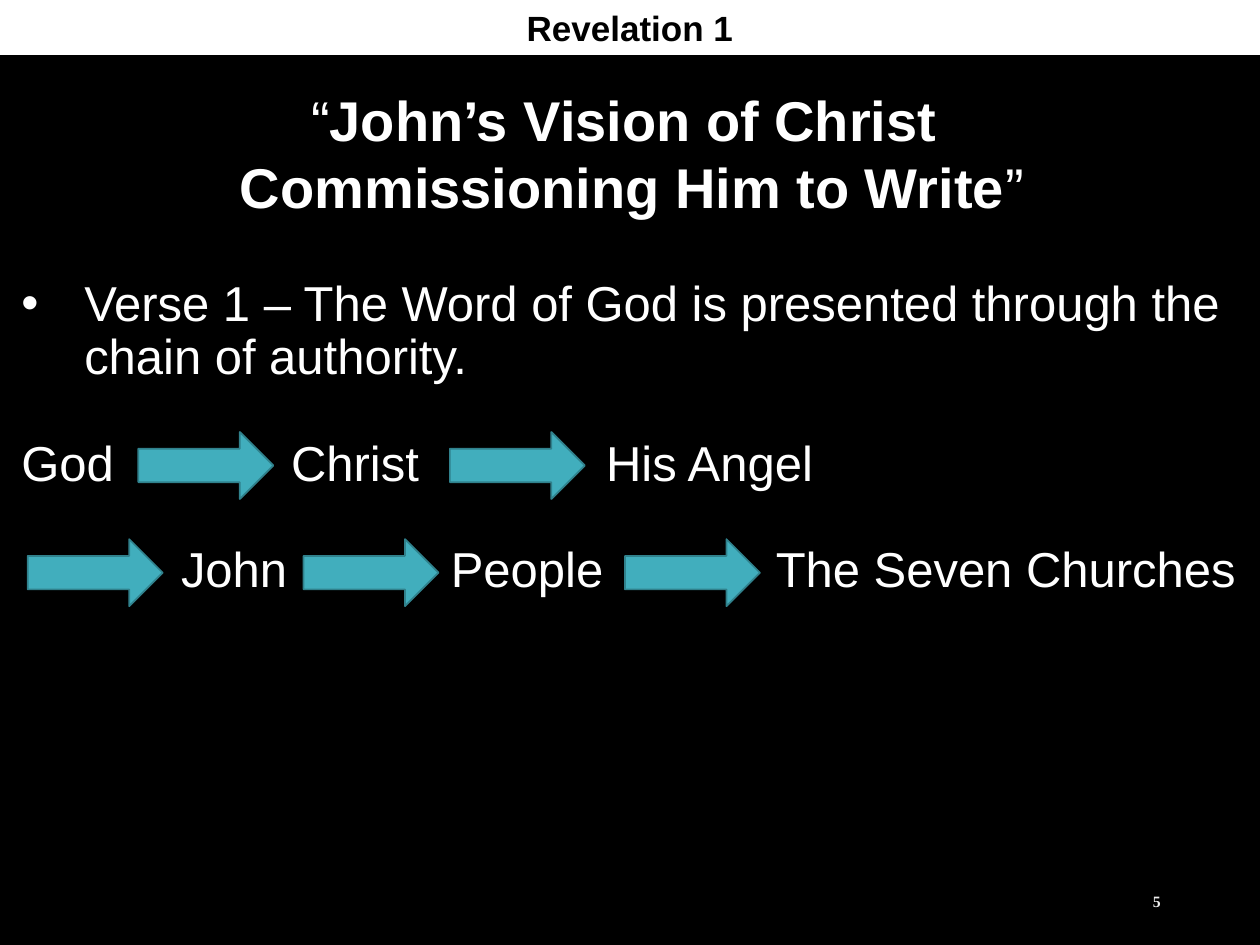
from dataclasses import dataclass

from pptx import Presentation
from pptx.dml.color import RGBColor
from pptx.enum.shapes import MSO_SHAPE
from pptx.enum.text import MSO_ANCHOR, PP_ALIGN
from pptx.oxml.ns import qn
from pptx.util import Cm, Pt
from lxml import etree

RECTANGLE = MSO_SHAPE.RECTANGLE
RIGHT_ARROW = MSO_SHAPE.RIGHT_ARROW
TOP, MIDDLE = MSO_ANCHOR.TOP, MSO_ANCHOR.MIDDLE
LEFT, CENTER, RIGHT = PP_ALIGN.LEFT, PP_ALIGN.CENTER, PP_ALIGN.RIGHT


@dataclass(frozen=True)
class Theme:
    black: RGBColor = RGBColor(0x00, 0x00, 0x00)
    white: RGBColor = RGBColor(0xFF, 0xFF, 0xFF)
    number: RGBColor = RGBColor(0xED, 0xED, 0xED)
    arrow: RGBColor = RGBColor(0x41, 0xAE, 0xBD)
    arrow_line: RGBColor = RGBColor(0x30, 0x81, 0x8C)
    font: str = "Arial"
    number_font: str = "Times New Roman"
    title_size: Pt = Pt(32)
    body_size: Pt = Pt(28)
    banner_size: Pt = Pt(20)
    number_size: Pt = Pt(9)
    row_gap: Pt = Pt(30.6)


THEME = Theme()


def set_font(paragraph, size, color, bold=None, name=THEME.font):
    font = paragraph.font
    font.name, font.size, font.bold = name, size, bold
    font.color.rgb = color


def add_text_box(slide, left, top, width, height, anchor=TOP, wrap=True):
    shape = slide.shapes.add_textbox(Cm(left), Cm(top), Cm(width), Cm(height))
    frame = shape.text_frame
    frame.word_wrap = wrap
    frame.vertical_anchor = anchor
    return frame


def add_shape(slide, kind, left, top, width, height, fill):
    shape = slide.shapes.add_shape(kind, Cm(left), Cm(top), Cm(width), Cm(height))
    shape.shadow.inherit = False
    shape.fill.solid()
    shape.fill.fore_color.rgb = fill
    return shape


def add_banner(slide, text):
    shape = add_shape(slide, RECTANGLE, 0, 0, 25.4, 1.11, THEME.white)
    shape.line.fill.background()
    shape.text_frame.vertical_anchor = TOP
    paragraph = shape.text_frame.paragraphs[0]
    paragraph.text = text
    paragraph.alignment = CENTER
    set_font(paragraph, THEME.banner_size, THEME.black, True)


def add_title(slide, lines):
    frame = add_text_box(slide, 4.42, 1.57, 16.64, 3, MIDDLE, False)
    for index, runs in enumerate(lines):
        paragraph = frame.add_paragraph() if index else frame.paragraphs[0]
        paragraph.alignment = CENTER
        set_font(paragraph, THEME.title_size, THEME.white)
        for text, bold in runs:
            run = paragraph.add_run()
            run.text = text
            run.font.bold = bold


def add_bullet(paragraph):
    properties = paragraph._p.get_or_add_pPr()
    properties.set("marL", str(Cm(1.27)))
    properties.set("indent", str(-Cm(1.27)))
    etree.SubElement(properties, qn("a:buFont"), typeface=THEME.font)
    etree.SubElement(properties, qn("a:buChar"), char="•")


def add_tabs(paragraph, stops):
    properties = paragraph._p.get_or_add_pPr()
    tabs = etree.SubElement(properties, qn("a:tabLst"))
    for stop in stops:
        etree.SubElement(tabs, qn("a:tab"), pos=str(Cm(stop)), algn="l")


def add_body(slide, verse, chain_rows):
    frame = add_text_box(slide, 0.18, 5.51, 25.1, 6.73)
    paragraph = frame.paragraphs[0]
    paragraph.text = verse
    add_bullet(paragraph)
    for text, stops in chain_rows:
        paragraph = frame.add_paragraph()
        paragraph.text = text
        add_tabs(paragraph, stops)
        paragraph.space_before = THEME.row_gap
    for paragraph in frame.paragraphs:
        paragraph.alignment = LEFT
        paragraph.line_spacing = 0.9
        set_font(paragraph, THEME.body_size, THEME.white)


def add_arrow(slide, left, top):
    shape = add_shape(slide, RIGHT_ARROW, left, top, 2.72, 1.35, THEME.arrow)
    shape.line.color.rgb = THEME.arrow_line
    shape.line.width = Pt(1)


def add_slide_number(slide, number):
    frame = add_text_box(slide, 17.93, 17.65, 5.72, 1.02, MIDDLE)
    paragraph = frame.paragraphs[0]
    paragraph.text = number
    paragraph.alignment = RIGHT
    set_font(paragraph, THEME.number_size, THEME.number, True, THEME.number_font)


def main():
    presentation = Presentation()
    presentation.slide_width, presentation.slide_height = Cm(25.4), Cm(19.05)
    slide = presentation.slides.add_slide(presentation.slide_layouts[6])
    background = slide.background.fill
    background.solid()
    background.fore_color.rgb = THEME.black

    add_title(slide, [
        [("“", False), ("John’s Vision of Christ ", True)],
        [("Commissioning Him to Write", True), ("”", False)],
    ])
    add_body(
        slide,
        "Verse 1 – The Word of God is presented through the chain of authority.",
        [
            ("God\tChrist\tHis Angel", (5.44, 11.79)),
            ("\tJohn\tPeople\tThe Seven Churches", (3.22, 8.66, 15.21)),
        ],
    )
    add_banner(slide, "Revelation 1")
    add_slide_number(slide, "5")
    for top, lefts in ((8.71, (2.79, 9.07)), (10.87, (0.56, 6.12, 12.6))):
        for left in lefts:
            add_arrow(slide, left, top)

    presentation.save("out.pptx")


if __name__ == "__main__":
    main()
